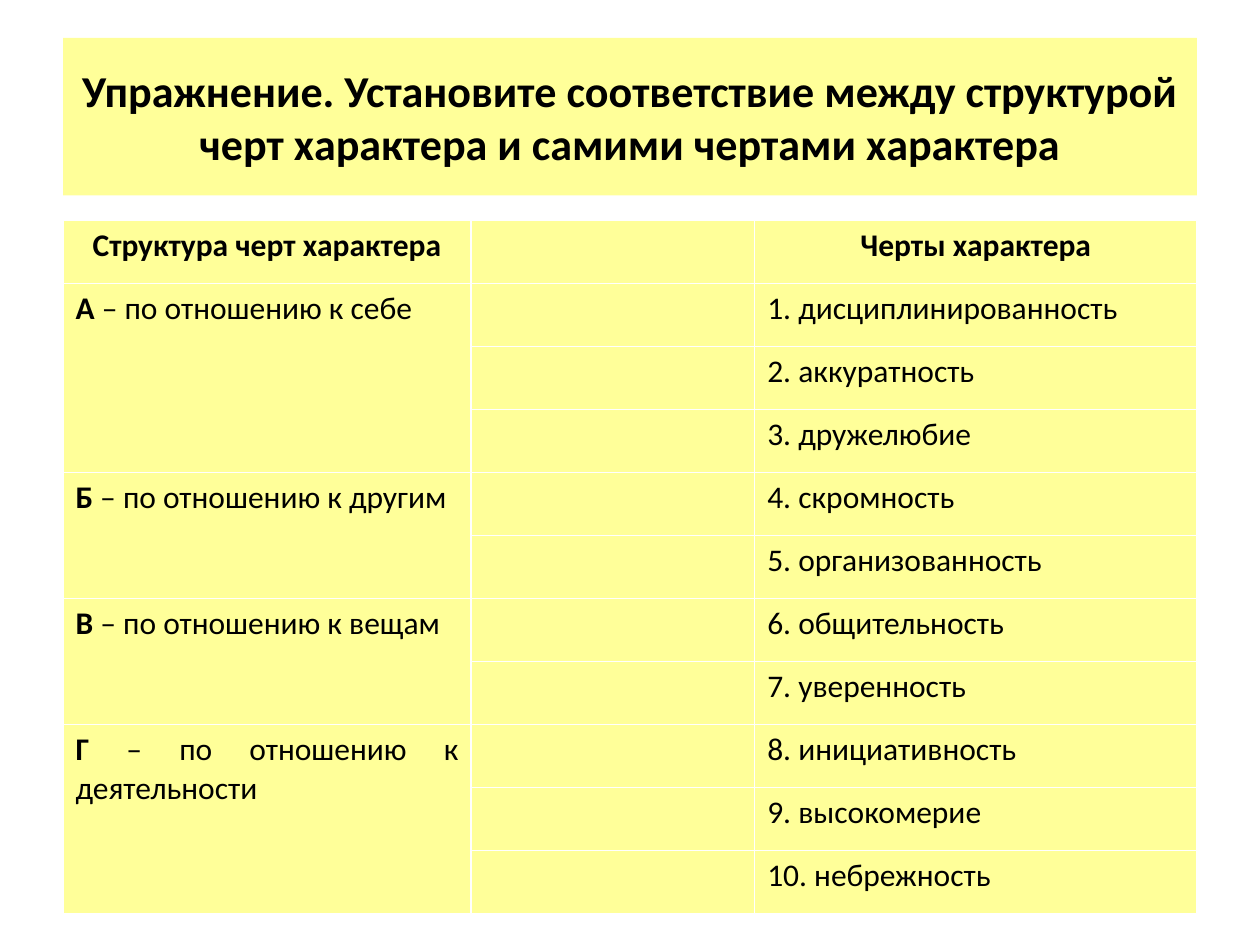
import pptx
import pptx.util
import pptx.dml.color
import pptx.enum.text

COLORS = {"panel": "FFFF99", "text": "000000"}
FONT = "Calibri"
SLIDE_WIDTH, SLIDE_HEIGHT = 10, 7.5
MARGIN = 0.05 * SLIDE_WIDTH
CONTENT_WIDTH = SLIDE_WIDTH - 2 * MARGIN
COLUMN_SHARES = (0.36, 0.25, 0.39)
ROW_HEIGHT = 0.5
TITLE = "Упражнение. Установите соответствие между структурой черт характера и самими чертами характера"
HEADINGS = ("Структура черт характера", "", "Черты характера")
GROUPS = (
    ("А", "по отношению к себе", 3),
    ("Б", "по отношению к другим", 2),
    ("В", "по отношению к вещам", 2),
    ("Г", "по отношению к деятельности", 3),
)
TRAITS = (
    "дисциплинированность", "аккуратность", "дружелюбие", "скромность",
    "организованность", "общительность", "уверенность", "инициативность",
    "высокомерие", "небрежность",
)
ALIGN = pptx.enum.text.PP_ALIGN


def paint(target):
    target.fill.solid()
    target.fill.fore_color.rgb = pptx.dml.color.RGBColor.from_string(COLORS["panel"])


def add_text(frame, text, size=18, bold=False, align=ALIGN.JUSTIFY):
    para = frame.paragraphs[0]
    para.alignment = align
    span = para.add_run()
    span.text = text
    span.font.name = FONT
    span.font.size = pptx.util.Pt(size)
    span.font.bold = bold
    span.font.color.rgb = pptx.dml.color.RGBColor.from_string(COLORS["text"])


def format_title(page):
    box = page.shapes.title
    box.left, box.top, box.width, box.height = (
        pptx.util.Inches(length) for length in (MARGIN, 0.3, CONTENT_WIDTH, 1.25)
    )
    paint(box)
    frame = box.text_frame
    frame.word_wrap = True
    frame.auto_size = pptx.enum.text.MSO_AUTO_SIZE.NONE
    frame.vertical_anchor = pptx.enum.text.MSO_ANCHOR.MIDDLE
    add_text(frame, TITLE, size=25.2, bold=True, align=ALIGN.CENTER)


def add_grid(page):
    row_count = len(TRAITS) + 1
    lengths = (MARGIN, 1.75, CONTENT_WIDTH, row_count * ROW_HEIGHT)
    table = page.shapes.add_table(
        row_count, len(HEADINGS), *(pptx.util.Inches(length) for length in lengths)
    ).table
    for column, share in zip(table.columns, COLUMN_SHARES):
        column.width = pptx.util.Inches(share * CONTENT_WIDTH)
    for cell in table.iter_cells():
        paint(cell)
    return table


def fill_grid(table):
    for column, heading in enumerate(HEADINGS):
        if heading:
            add_text(table.cell(0, column).text_frame, heading, bold=True, align=ALIGN.CENTER)
    for number, trait in enumerate(TRAITS, start=1):
        add_text(table.cell(number, 2).text_frame, f"{number}. {trait}")
    row = 1
    for letter, attitude, height in GROUPS:
        cell = table.cell(row, 0)
        cell.merge(table.cell(row + height - 1, 0))
        add_text(cell.text_frame, letter, bold=True)
        add_text(cell.text_frame, f" – {attitude}")
        row += height


def main():
    deck = pptx.Presentation()
    deck.slide_width = pptx.util.Inches(SLIDE_WIDTH)
    deck.slide_height = pptx.util.Inches(SLIDE_HEIGHT)
    page = deck.slides.add_slide(deck.slide_layouts.get_by_name("Title Only"))
    format_title(page)
    fill_grid(add_grid(page))
    deck.save("out.pptx")


if __name__ == "__main__":
    main()
